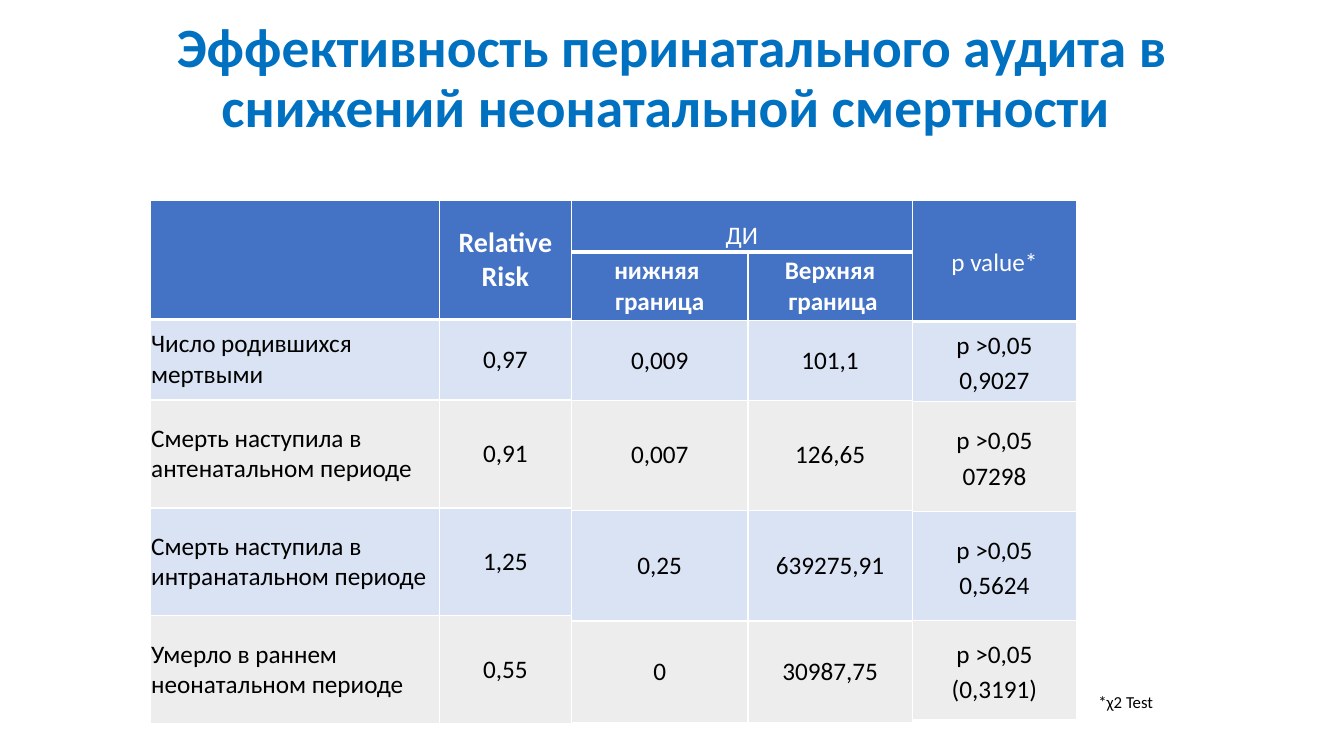
from lxml import etree
from pptx import Presentation
from pptx import util as u
from pptx.dml.color import RGBColor
from pptx.enum import text
from pptx.oxml import ns

FONT = "Calibri"
BLUE = RGBColor(0x00, 0x70, 0xC0)
HEADER = RGBColor(0x44, 0x72, 0xC4)
BANDS = (RGBColor(0xDA, 0xE3, 0xF3), RGBColor(0xED, 0xED, 0xED))
WHITE = RGBColor(0xFF, 0xFF, 0xFF)
BLACK = RGBColor(0x00, 0x00, 0x00)
LEFT, CENTER, RIGHT = text.PP_ALIGN.LEFT, text.PP_ALIGN.CENTER, text.PP_ALIGN.RIGHT
MIDDLE, BOTTOM = text.MSO_ANCHOR.MIDDLE, text.MSO_ANCHOR.BOTTOM
TABLE_TOP = 5.05


def write(tf, content, size, color, bold=False, align=CENTER, spacing=1.0):
    """Write each line of content as a paragraph with one run."""
    for i, line in enumerate(content.split("\n")):
        p = tf.paragraphs[0] if i == 0 else tf.add_paragraph()
        p.alignment = align
        p.line_spacing = spacing
        r = p.add_run()
        r.text = line
        r.font.name = FONT
        r.font.size = u.Pt(size)
        r.font.bold = bold
        r.font.color.rgb = color


def add_label(s, box, content, size, color, **style):
    """Add a wrapping text box and return its text frame."""
    tf = s.shapes.add_textbox(*map(u.Cm, box)).text_frame
    tf.word_wrap = True
    write(tf, content, size, color, **style)
    return tf


def add_borders(cell, bottom):
    """Draw white cell borders, with the bottom one of the given width."""
    props = cell._tc.get_or_add_tcPr()
    for side, width in (("L", 1), ("R", 1), ("T", 1), ("B", bottom)):
        line = etree.SubElement(props, ns.qn(f"a:ln{side}"), w=str(u.Pt(width)))
        fill = etree.SubElement(line, ns.qn("a:solidFill"))
        etree.SubElement(fill, ns.qn("a:srgbClr"), val=str(WHITE))


def format_cell(cell, fill, bottom=1, anchor=MIDDLE):
    """Set the borders, fill, anchor and narrow margins of a cell."""
    add_borders(cell, bottom)
    cell.fill.solid()
    cell.fill.fore_color.rgb = fill
    cell.vertical_anchor = anchor
    cell.margin_left = cell.margin_right = u.Cm(0.03)
    cell.margin_top = cell.margin_bottom = u.Cm(0.03)


def add_grid(s, left, widths, heights, headers, body, aligns, spacing=1.0):
    """Add a table from rows of (text, size, bold) headers and rows of body text."""
    frame = s.shapes.add_table(len(heights), len(widths), u.Cm(left), u.Cm(TABLE_TOP),
                               u.Cm(sum(widths)), u.Cm(sum(heights)))
    table = frame.table
    table.first_row = table.horz_banding = False
    for column, width in zip(table.columns, widths):
        column.width = u.Cm(width)
    for row, height in zip(table.rows, heights):
        row.height = u.Cm(height)
    for i, row in enumerate(headers):
        for j, (content, size, bold) in enumerate(row):
            cell = table.cell(i, j)
            stacked = i < len(headers) - 1
            format_cell(cell, HEADER, 1 if i else 3, BOTTOM if stacked else MIDDLE)
            if content:
                write(cell.text_frame, content, size, WHITE, bold, spacing=spacing)
    for i, row in enumerate(body):
        for j, content in enumerate(row):
            cell = table.cell(len(headers) + i, j)
            format_cell(cell, BANDS[i % 2])
            write(cell.text_frame, content, 18, BLACK, align=aligns[j], spacing=spacing)
    return table


def main():
    """Build the slide and save it."""
    prs = Presentation()
    prs.slide_width, prs.slide_height = u.Cm(33.87), u.Cm(19.05)
    s = prs.slides.add_slide(prs.slide_layouts[6])

    title = add_label(s, (2.33, 1.01, 29.21, 3.68),
                      "Эффективность перинатального аудита в снижений неонатальной смертности ",
                      39.6, BLUE, bold=True, spacing=0.9)
    title.vertical_anchor = MIDDLE
    title.margin_bottom = u.Cm(1.83)

    add_grid(s, 3.78, (7.29, 3.33), (3.0, 2.03, 2.72, 2.72, 2.72),
             [[("", 18, False), ("Relative Risk", 20, True)]],
             [["Число родившихся\nмертвыми", "0,97"],
              ["Смерть наступила в антенатальном периоде", "0,91"],
              ["Смерть наступила в интранатальном периоде", "1,25"],
              ["Умерло в раннем неонатальном периоде", "0,55"]],
             (LEFT, CENTER))

    interval = add_grid(s, 14.4, (4.45, 4.14), (1.3, 1.73, 2.01, 2.77, 2.79, 2.57),
                        [[("ДИ", 18, False), ("", 18, False)],
                         [("нижняя \nграница", 18, True), ("Верхняя\n граница", 18, True)]],
                        [["0,009", "101,1"], ["0,007", "126,65"],
                         ["0,25", "639275,91"], ["0", "30987,75"]],
                        (CENTER, CENTER))
    interval.cell(0, 0).merge(interval.cell(0, 1))

    add_grid(s, 22.99, (4.14,), (3.05, 2.01, 2.79, 2.74, 2.49),
             [[("p value*", 18, False)]],
             [["p >0,05\n0,9027"], ["p >0,05\n07298"],
              ["p >0,05\n0,5624"], ["p >0,05 (0,3191)"]],
             (CENTER,), spacing=1.15)

    add_label(s, (26.92, 17.3, 2.39, 0.76), "*χ2 Test", 12, BLACK, align=RIGHT)
    prs.save("out.pptx")


if __name__ == "__main__":
    main()
